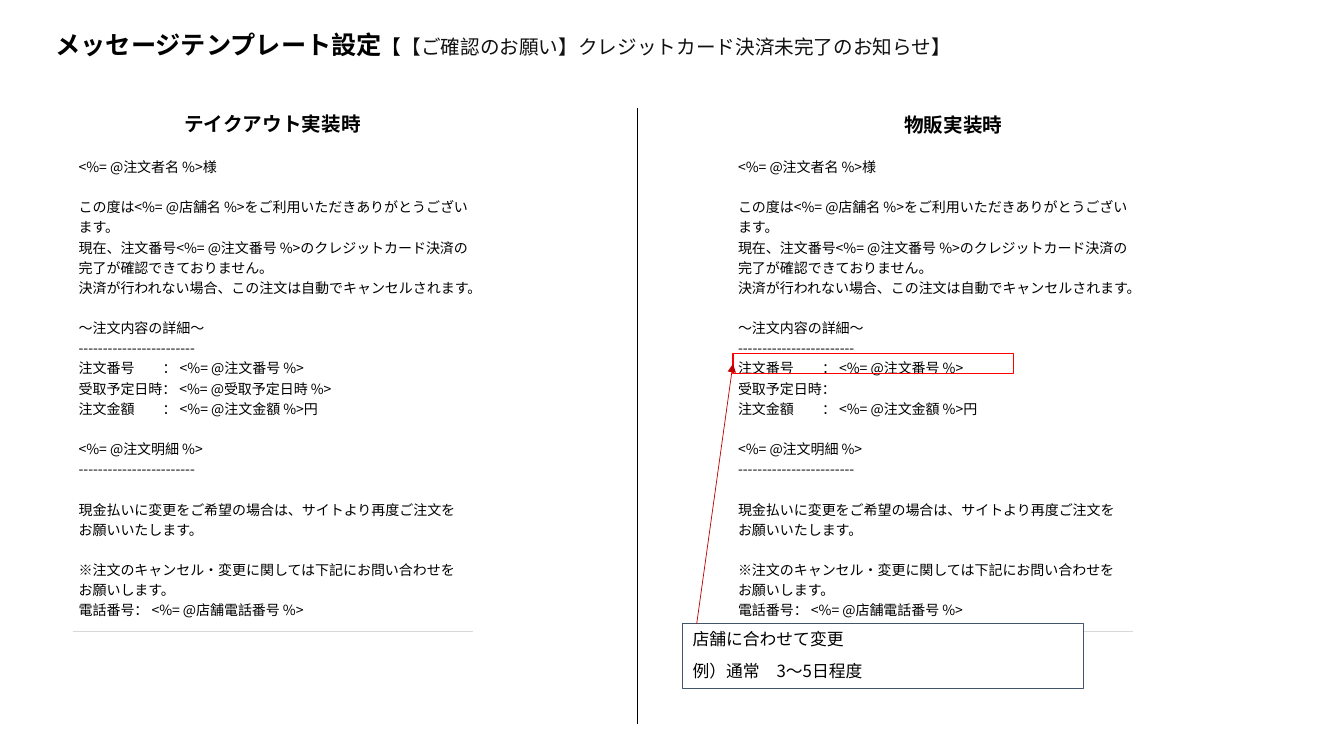
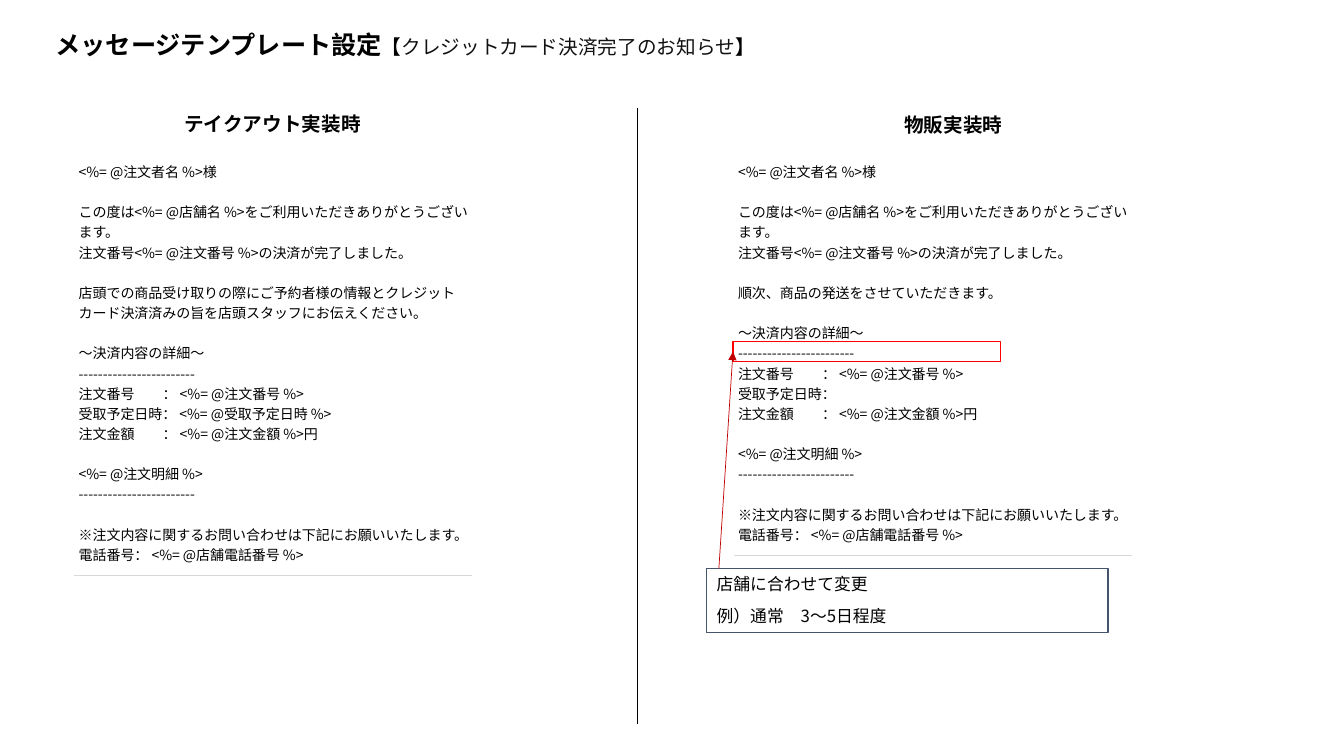
from dataclasses import dataclass

from pptx import Presentation
from pptx.dml.color import RGBColor
from pptx.enum.shapes import MSO_CONNECTOR as Connector, MSO_SHAPE as Shape
from pptx.enum.text import MSO_ANCHOR as Anchor, MSO_AUTO_SIZE as AutoSize, PP_ALIGN as Align
from pptx.oxml.ns import qn
from pptx.util import Emu, Pt
from lxml.etree import SubElement

EMU_PER_PX = 9144


def px(length):
    return Emu(length * EMU_PER_PX)


@dataclass(frozen=True)
class Theme:
    font: str = "Noto Sans CJK JP"
    subject_font: str = "Lato"
    ink: str = "000000"
    subject_ink: str = "111111"
    paper: str = "FFFFFF"
    rule: str = "D8D8D8"
    note_line: str = "44546A"
    frame_line: str = "FF0000"
    arrow_line: str = "C00000"
    title_size: float = 18
    heading_size: float = 14
    note_size: float = 12
    body_size: float = 10
    thin: float = 0.5
    medium: float = 0.75
    line_gap: float = 14.4
    label_width: float = 60


class MessageDeck:
    def __init__(self, theme):
        self.theme = theme
        self.deck = Presentation()
        self.deck.slide_width, self.deck.slide_height = px(1333), px(750)
        self.page = None

    def add_page(self):
        self.page = self.deck.slides.add_slide(self.deck.slide_layouts[5])

    def style_span(self, span, size, bold=False, font=None, color=None):
        span.font.size = Pt(size)
        span.font.bold = bold
        span.font.name = font or self.theme.font
        span.font.color.rgb = RGBColor.from_string(color or self.theme.ink)
        SubElement(span.font._element, qn("a:ea"), typeface=self.theme.font)

    def style_para(self, para, size, bold=False):
        para.alignment = Align.LEFT
        for span in para.runs:
            self.style_span(span, size, bold)

    def style_line(self, line, color, width):
        line.color.rgb = RGBColor.from_string(color)
        line.width = Pt(width)

    def title(self, parts):
        theme = self.theme
        box = self.page.shapes.title
        box.left, box.top, box.width, box.height = map(px, (45, 19, 1264, 53))
        frame = box.text_frame
        frame.auto_size = AutoSize.NONE
        frame.vertical_anchor = Anchor.MIDDLE
        para = frame.paragraphs[0]
        para.alignment = Align.LEFT
        para.line_spacing = 0.9
        para.space_before = Pt(10)
        heading = para.add_run()
        heading.text = "メッセージテンプレート設定"
        self.style_span(heading, theme.title_size, True)
        for text, is_subject in parts:
            span = para.add_run()
            span.text = text
            if is_subject:
                self.style_span(span, theme.heading_size, False, theme.subject_font, theme.subject_ink)
            else:
                self.style_span(span, theme.heading_size, True)

    def heading(self, left, top, text):
        box = self.page.shapes.add_textbox(*map(px, (left, top, 378, 34)))
        frame = box.text_frame
        frame.word_wrap = True
        frame.auto_size = AutoSize.SHAPE_TO_FIT_TEXT
        frame.text = text
        self.style_para(frame.paragraphs[0], self.theme.heading_size, True)

    def message(self, left, top, height, blocks):
        theme = self.theme
        table = self.page.shapes.add_table(1, 1, *map(px, (left, top, 396, height))).table
        table.first_row = table.horz_banding = False
        cell = table.cell(0, 0)
        cell.vertical_anchor = Anchor.MIDDLE
        cell.margin_left = cell.margin_right = px(5)
        cell.margin_top = cell.margin_bottom = px(11)
        cell.fill.background()
        self.bottom_border(cell)
        frame = cell.text_frame
        frame.text = "\n".join(line for block in blocks for line in block)
        paras = iter(frame.paragraphs)
        for block_number, block in enumerate(blocks):
            for line_number, line in enumerate(block):
                para = next(paras)
                self.style_para(para, theme.body_size)
                if block_number and not line_number:
                    para.space_before = Pt(theme.line_gap)
                if "\t" in line:
                    self.tab_stop(para)

    def tab_stop(self, para):
        tabs = SubElement(para._p.get_or_add_pPr(), qn("a:tabLst"))
        SubElement(tabs, qn("a:tab"), pos=str(Pt(self.theme.label_width)), algn="l")

    def bottom_border(self, cell):
        properties = cell._tc.get_or_add_tcPr()
        border = SubElement(properties, qn("a:lnB"), w=str(Pt(self.theme.medium)))
        fill = SubElement(border, qn("a:solidFill"))
        SubElement(fill, qn("a:srgbClr"), val=self.theme.rule)
        properties.insert(0, border)

    def rectangle(self, place, color):
        box = self.page.shapes.add_shape(Shape.RECTANGLE, *map(px, place))
        box.shadow.inherit = False
        box.fill.background()
        self.style_line(box.line, color, self.theme.medium)
        return box

    def note(self, left, top, text):
        box = self.rectangle((left, top, 398, 64), self.theme.note_line)
        box.fill.solid()
        box.fill.fore_color.rgb = RGBColor.from_string(self.theme.paper)
        frame = box.text_frame
        frame.word_wrap = True
        frame.vertical_anchor = Anchor.MIDDLE
        frame.text = text
        for para in frame.paragraphs:
            para.line_spacing = 0.9
            para.space_before = Pt(10)
            self.style_para(para, self.theme.note_size)

    def connector(self, start, end, color):
        line = self.page.shapes.add_connector(Connector.STRAIGHT, *map(px, start + end))
        self.style_line(line.line, color, self.theme.thin)
        SubElement(line._element.spPr, qn("a:effectLst"))
        return line

    def arrow_to(self, start, box):
        end = (box.left // EMU_PER_PX, (box.top + box.height // 2) // EMU_PER_PX)
        arrow = self.connector(start, end, self.theme.arrow_line)
        arrow.end_connect(box, 1)
        SubElement(arrow.line._get_or_add_ln(), qn("a:tailEnd"), type="triangle")


TAKEOUT_LEFT, GOODS_LEFT = 73, 727
DASHES = "------------------------"
PICKUP = "受取予定日時："
PICKUP_FILLED = PICKUP + " <%= @受取予定日時 %>"
NOTE = "店舗に合わせて変更\n例）通常　3〜5日程度"
GREETING = ["<%= @注文者名 %>様"]
THANKS = "この度は<%= @店舗名 %>をご利用いただきありがとうございます。"
PHONE = "電話番号： <%= @店舗電話番号 %>"


def order_details(name, pickup):
    return [
        [f"〜{name}内容の詳細〜", DASHES, "注文番号\t： <%= @注文番号 %>", pickup,
         "注文金額\t： <%= @注文金額 %>円"],
        ["<%= @注文明細 %>", DASHES],
    ]


def unpaid_message(pickup):
    return [
        GREETING,
        [THANKS,
         "現在、注文番号<%= @注文番号 %>のクレジットカード決済の完了が確認できておりません。",
         "決済が行われない場合、この注文は自動でキャンセルされます。"],
        *order_details("注文", pickup),
        ["現金払いに変更をご希望の場合は、サイトより再度ご注文をお願いいたします。"],
        ["※注文のキャンセル・変更に関しては下記にお問い合わせをお願いします。", PHONE],
    ]


def paid_message(guidance, pickup):
    return [
        GREETING,
        [THANKS, "注文番号<%= @注文番号 %>の決済が完了しました。"],
        [guidance],
        *order_details("決済", pickup),
        ["※注文内容に関するお問い合わせは下記にお願いいたします。", PHONE],
    ]


PAGES = [
    {
        "title": [("【", False), ("【ご確認のお願い】クレジットカード決済未完了のお知らせ】", True)],
        "top": 144,
        "takeout": (422, unpaid_message(PICKUP_FILLED)),
        "goods": (422, unpaid_message(PICKUP)),
        "note": (677, 619),
        "frame": (727, 351, 278, 20),
        "arrow_start": (691, 619),
    },
    {
        "title": [("【", False), ("クレジットカード決済完了のお知らせ", True), ("】", False)],
        "top": 149,
        "takeout": (355, paid_message(
            "店頭での商品受け取りの際にご予約者様の情報とクレジットカード決済済みの旨を店頭スタッフにお伝えください。",
            PICKUP_FILLED)),
        "goods": (339, paid_message("順次、商品の発送をさせていただきます。", PICKUP)),
        "note": (701, 564),
        "frame": (727, 339, 265, 20),
        "arrow_start": (713, 564),
    },
]


def main():
    theme = Theme()
    builder = MessageDeck(theme)
    for content in PAGES:
        builder.add_page()
        builder.title(content["title"])
        builder.message(TAKEOUT_LEFT, content["top"], *content["takeout"])
        builder.message(GOODS_LEFT, content["top"], *content["goods"])
        builder.connector((632, 107), (632, 718), theme.ink)
        builder.note(*content["note"], NOTE)
        frame = builder.rectangle(content["frame"], theme.frame_line)
        builder.arrow_to(content["arrow_start"], frame)
        builder.heading(887, 107, "物販実装時")
        builder.heading(173, 106, "テイクアウト実装時")
    builder.deck.save("out.pptx")


if __name__ == "__main__":
    main()
